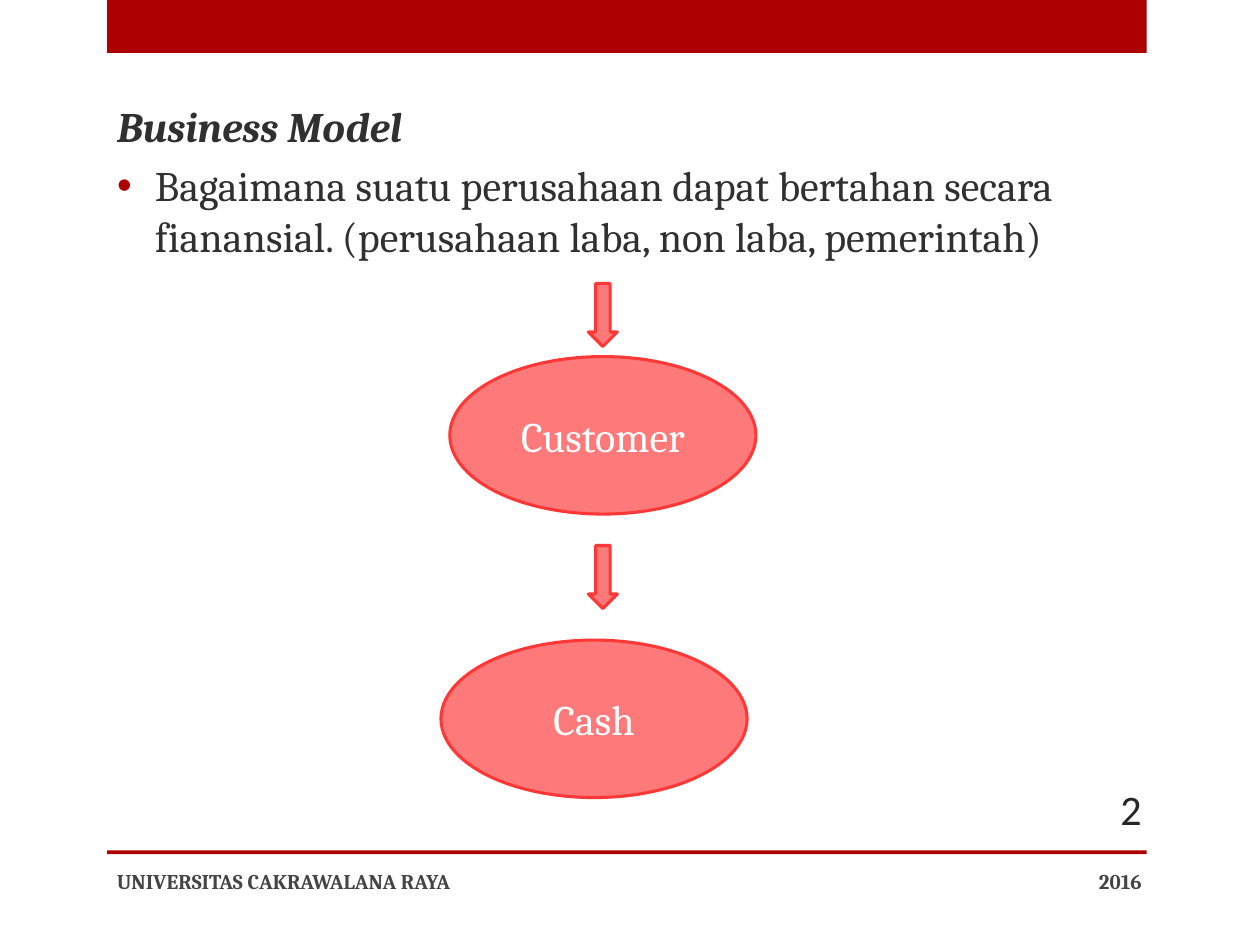
import lxml.etree
import pptx
import pptx.dml.color
import pptx.enum.shapes
import pptx.enum.text
import pptx.oxml.ns
import pptx.util

Inches = pptx.util.Inches
Pt = pptx.util.Pt
ALIGN = pptx.enum.text.PP_ALIGN
ANCHOR = pptx.enum.text.MSO_ANCHOR
SHAPE = pptx.enum.shapes.MSO_SHAPE

RED = "AD0101"
PINK = "FE7979"
PINK_EDGE = "FE3737"
BODY_GREY = "303030"
FOOTER_GREY = "454545"


def color(hex_string):
    return pptx.dml.color.RGBColor.from_string(hex_string)


def write(paragraph, text, size=24, font="Cambria", fill=BODY_GREY,
          bold=False, italic=False, align=ALIGN.LEFT, space_before=0):
    paragraph.alignment = align
    paragraph.space_before = Pt(space_before)
    run = paragraph.add_run()
    run.text = text
    run.font.size = Pt(size)
    run.font.name = font
    run.font.bold = bold
    run.font.italic = italic
    run.font.color.rgb = color(fill)


def set_bullet(paragraph, character=None, indent=0):
    """Set a red hanging bullet, or none when no character is given."""
    properties = paragraph._p.get_or_add_pPr()
    properties.set("marL", str(Inches(indent)))
    properties.set("indent", str(-Inches(indent)))

    def add(parent, tag, **attributes):
        return lxml.etree.SubElement(parent, pptx.oxml.ns.qn(tag), **attributes)

    if character is None:
        add(properties, "a:buNone")
        return
    add(add(properties, "a:buClr"), "a:srgbClr", val=RED)
    add(properties, "a:buFont", typeface="Arial")
    add(properties, "a:buChar", char=character)


def add_figure(slide, kind, box, fill, edge=None):
    shape = slide.shapes.add_shape(kind, *map(Inches, box))
    shape.shadow.inherit = False
    shape.fill.solid()
    shape.fill.fore_color.rgb = color(fill)
    if edge:
        shape.line.color.rgb = color(edge)
        shape.line.width = Pt(1.75)
    else:
        shape.line.fill.background()
    return shape


def add_label(slide, box, text, **text_format):
    frame = slide.shapes.add_textbox(*map(Inches, box)).text_frame
    frame.word_wrap = True
    frame.vertical_anchor = ANCHOR.MIDDLE
    write(frame.paragraphs[0], text, **text_format)


def add_bands(slide, left, width):
    for top, height in ((0, 0.42), (6.75, 0.03)):
        add_figure(slide, SHAPE.RECTANGLE, (left, top, width, height), RED)


def fill_body(body, box):
    body.left, body.top, body.width, body.height = map(Inches, box)
    frame = body.text_frame
    frame.auto_size = pptx.enum.text.MSO_AUTO_SIZE.NONE
    frame.vertical_anchor = ANCHOR.TOP
    heading = frame.paragraphs[0]
    write(heading, "Business Model", bold=True, italic=True, space_before=4.8)
    set_bullet(heading)
    question = frame.add_paragraph()
    write(question, "Bagaimana suatu perusahaan dapat bertahan secara "
          "fianansial. (perusahaan laba, non laba, pemerintah)",
          space_before=4.8)
    set_bullet(question, "•", 0.3)


def add_footer(slide, left, right):
    small = {"size": 12, "fill": FOOTER_GREY, "bold": True}
    top, height = 6.79, 0.4
    add_label(slide, (right - 2.33, top, 2.33, height), "2016",
              align=ALIGN.RIGHT, **small)
    add_label(slide, (left, top, 5.33, height),
              "UNIVERSITAS CAKRAWALANA RAYA", **small)
    add_label(slide, (right - 0.83, 6.22, 0.83, height), "2",
              font="Calibri", fill="262626", align=ALIGN.RIGHT)


def add_step(slide, text, arrow_top, oval_left, oval_top):
    """Draw a down arrow and the oval it leads to."""
    add_figure(slide, SHAPE.DOWN_ARROW, (4.67, arrow_top, 0.23, 0.5),
               PINK, PINK_EDGE)
    oval = add_figure(slide, SHAPE.OVAL, (oval_left, oval_top, 2.43, 1.25),
                      PINK, PINK_EDGE)
    oval.text_frame.vertical_anchor = ANCHOR.MIDDLE
    write(oval.text_frame.paragraphs[0], text, fill="FFFFFF",
          align=ALIGN.CENTER)


def main():
    presentation = pptx.Presentation()
    presentation.slide_width = Inches(10)
    presentation.slide_height = Inches(7.5)
    slide = presentation.slides.add_slide(presentation.slide_layouts[1])
    title = slide.shapes.title.element
    title.getparent().remove(title)

    add_bands(slide, 0.85, 8.25)
    fill_body(slide.placeholders[1], (0.83, 0.75, 8.25, 5.97))
    add_footer(slide, 0.83, 9.16)
    add_step(slide, "Customer", 2.25, 3.57, 2.83)
    add_step(slide, "Cash", 4.33, 3.5, 5.08)
    presentation.save("out.pptx")


if __name__ == "__main__":
    main()
